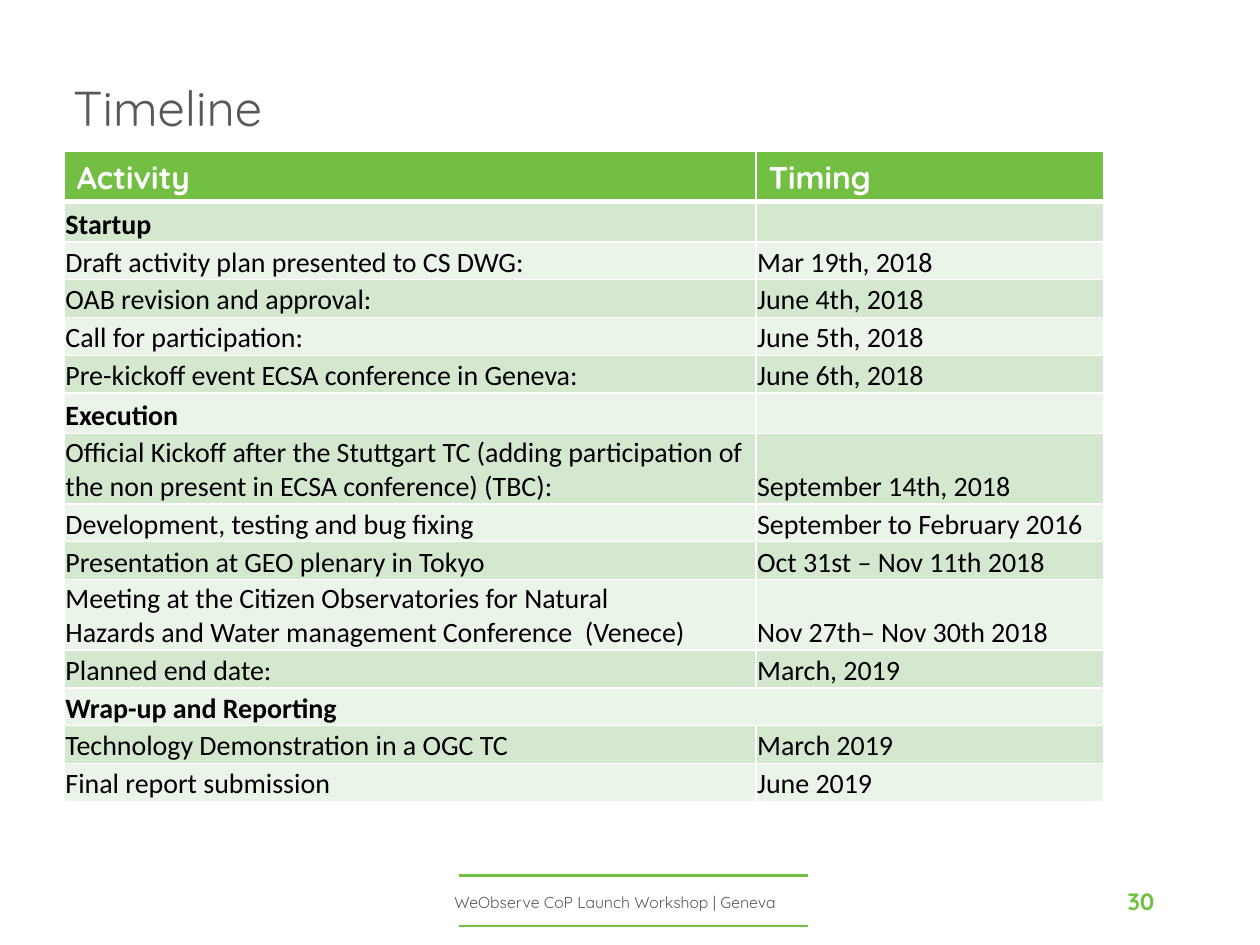
from lxml.etree import SubElement
from pptx import Presentation
from pptx.dml.color import RGBColor
from pptx.enum.shapes import MSO_CONNECTOR
from pptx.enum.text import MSO_ANCHOR, PP_ALIGN
from pptx.oxml import parse_xml
from pptx.oxml.ns import nsdecls, qn
from pptx.util import Inches, Pt

TITLE = "Timeline"
FOOTER = "WeObserve CoP Launch Workshop | Geneva"
PAGE_NUMBER = "30"
HEADINGS = ("Activity", "Timing")
PHASES = [
    ("Startup", [
        ("Draft activity plan presented to CS DWG:", "Mar 19th, 2018"),
        ("OAB revision and approval:", "June 4th, 2018"),
        ("Call for participation:", "June 5th, 2018"),
        ("Pre-kickoff event ECSA conference in Geneva:", "June 6th, 2018"),
    ]),
    ("Execution", [
        ("Official Kickoff after the Stuttgart TC (adding participation of "
         "the non present in ECSA conference) (TBC):", "September 14th, 2018"),
        ("Development, testing and bug fixing", "September to February 2016"),
        ("Presentation at GEO plenary in Tokyo", "Oct 31st – Nov 11th 2018"),
        ("Meeting at the Citizen Observatories for Natural\n"
         "Hazards and Water management Conference  (Venece)",
         "Nov 27th– Nov 30th 2018"),
        ("Planned end date:", "March, 2019"),
    ]),
    ("Wrap-up and Reporting", [
        ("Technology Demonstration in a OGC TC", "March 2019"),
        ("Final report submission", "June 2019"),
    ]),
]
MERGED_PHASES = {"Wrap-up and Reporting"}

GREEN, GREY, WHITE, BLACK = (
    RGBColor.from_string(c) for c in ("72BF44", "58595B", "FFFFFF", "000000"))
BANDS = [RGBColor.from_string(c) for c in ("D5E8CF", "EBF4E9")]
THEME = {
    "title": dict(name="Quicksand", size=Pt(28), color=GREY, bold=False),
    "heading": dict(name="Quicksand", size=Pt(18), color=WHITE, bold=True),
    "phase": dict(name="Calibri", size=Pt(16), color=BLACK, bold=True),
    "step": dict(name="Calibri", size=Pt(16), color=BLACK, bold=False),
    "footer": dict(name="Quicksand", size=Pt(9), color=GREY, bold=False),
    "number": dict(name="Quicksand", size=Pt(13.5), color=GREEN, bold=True),
}
BODY_CELL = dict(vertical_anchor=MSO_ANCHOR.BOTTOM, margin_left=Inches(0.01),
                 margin_right=Inches(0.01), margin_top=Inches(0.01),
                 margin_bottom=0)
COLUMN_WIDTHS = (5.49, 2.76)
HEADING_HEIGHT, PHASE_HEIGHT, STEP_HEIGHT, TWO_LINE_HEIGHT = 0.4, 0.32, 0.3, 0.56
LINE_CAPACITY = 64


def write(frame, text, role, align=PP_ALIGN.LEFT):
    frame.text = text
    for paragraph in frame.paragraphs:
        paragraph.alignment = align
        for run in paragraph.runs:
            for key, value in THEME[role].items():
                if key == "color":
                    run.font.color.rgb = value
                else:
                    setattr(run.font, key, value)


def add_label(slide, box, text, role, align):
    frame = slide.shapes.add_textbox(*map(Inches, box)).text_frame
    frame.word_wrap = True
    frame.vertical_anchor = MSO_ANCHOR.MIDDLE
    write(frame, text, role, align)


def add_rule(slide, y):
    rule = slide.shapes.add_connector(
        MSO_CONNECTOR.STRAIGHT, Inches(3.64), Inches(y), Inches(6.41), Inches(y))
    rule.line.color.rgb = GREEN
    rule.line.width = Pt(1.5)
    SubElement(rule._element.spPr, qn("a:effectLst"))


def set_borders(cell, top, bottom):
    properties = cell._tc.get_or_add_tcPr()
    widths = {"lnL": 1, "lnR": 1, "lnT": top, "lnB": bottom}
    for position, (side, points) in enumerate(widths.items()):
        properties.insert(position, parse_xml(
            f'<a:{side} {nsdecls("a")} w="{Pt(points)}"><a:solidFill>'
            f'<a:srgbClr val="{WHITE}"/></a:solidFill></a:{side}>'))


def timeline_rows():
    """List each row as texts, role and height."""
    rows = [(HEADINGS, "heading", HEADING_HEIGHT)]
    for phase, steps in PHASES:
        merged = phase in MERGED_PHASES
        rows.append(((phase, ""), "phase", STEP_HEIGHT if merged else PHASE_HEIGHT))
        for activity, timing in steps:
            wraps = len(activity) > LINE_CAPACITY
            rows.append(((activity, timing), "step",
                         TWO_LINE_HEIGHT if wraps else STEP_HEIGHT))
    return rows


def add_timeline(slide):
    rows = timeline_rows()
    table = slide.shapes.add_table(
        len(rows), len(HEADINGS), Inches(0.51), Inches(1.2),
        Inches(sum(COLUMN_WIDTHS)), Inches(sum(row[2] for row in rows))).table
    for column, width in zip(table.columns, COLUMN_WIDTHS):
        column.width = Inches(width)
    for index, (texts, role, height) in enumerate(rows):
        table.rows[index].height = Inches(height)
        for cell, text in zip(table.rows[index].cells, texts):
            cell.fill.solid()
            cell.fill.fore_color.rgb = BANDS[(index - 1) % 2] if index else GREEN
            set_borders(cell, 3 if index == 1 else 1, 1 if index else 3)
            if index:
                for key, value in BODY_CELL.items():
                    setattr(cell, key, value)
            if text:
                write(cell.text_frame, text, role)
        if texts[0] in MERGED_PHASES:
            table.cell(index, 0).merge(table.cell(index, 1))


def main():
    deck = Presentation()
    deck.slide_width, deck.slide_height = Inches(10), Inches(7.5)
    slide = deck.slides.add_slide(deck.slide_layouts[5])

    for y in (7.35, 6.95):
        add_rule(slide, y)
    add_label(slide, (3.19, 6.96, 3.38, 0.4), FOOTER, "footer", PP_ALIGN.CENTER)
    add_label(slide, (8.78, 6.89, 0.48, 0.53), PAGE_NUMBER, "number", PP_ALIGN.RIGHT)
    add_timeline(slide)

    title = slide.shapes.title
    title.left, title.top, title.width, title.height = map(
        Inches, (0.48, 0.48, 8.06, 0.79))
    title.text_frame.vertical_anchor = MSO_ANCHOR.MIDDLE
    write(title.text_frame, TITLE, "title")
    title.text_frame.paragraphs[0].line_spacing = 0.9

    deck.save("out.pptx")


if __name__ == "__main__":
    main()
